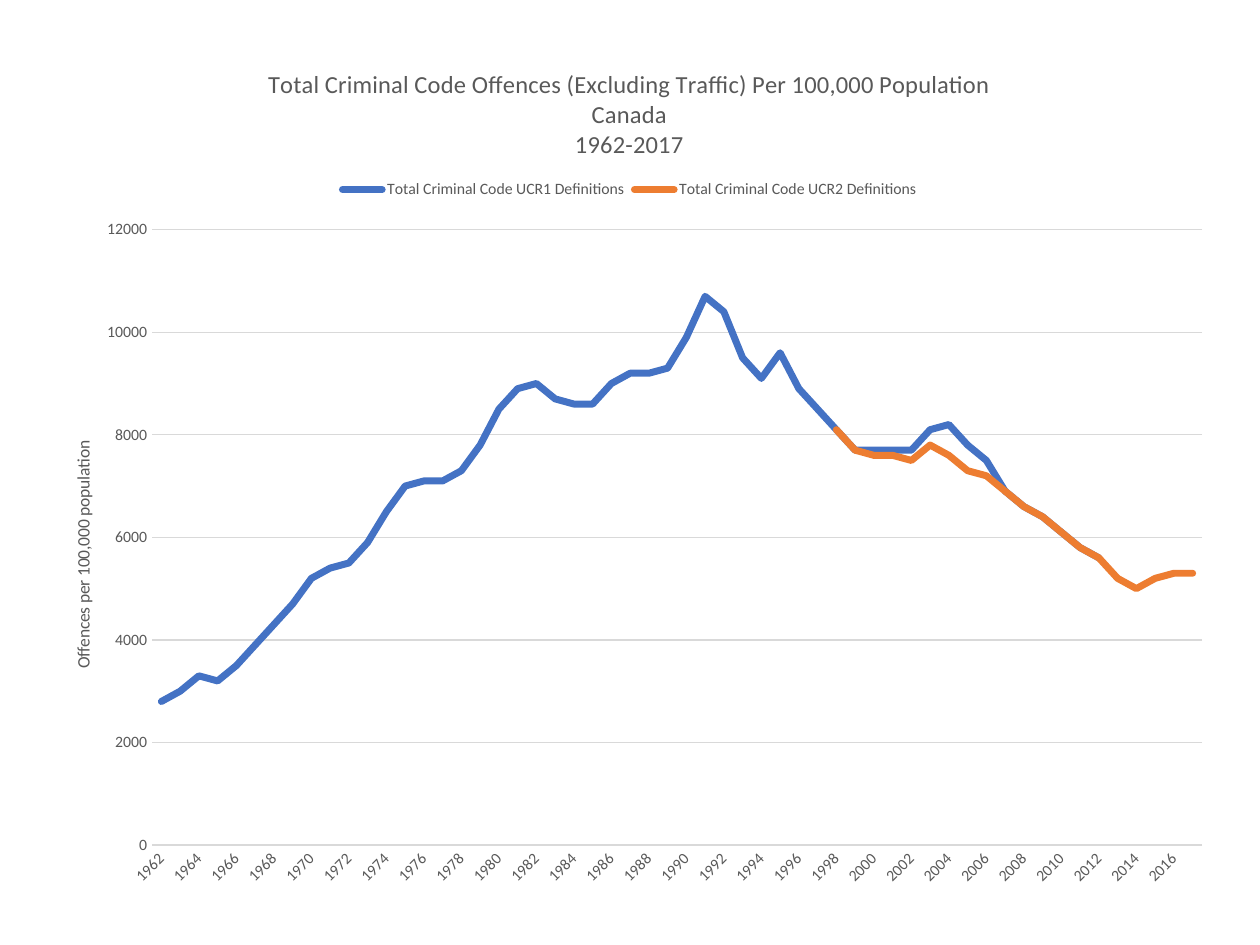
from lxml.etree import SubElement
from pptx import Presentation
from pptx.chart.data import CategoryChartData
from pptx.dml.color import RGBColor
from pptx.enum.chart import XL_CHART_TYPE as ChartType, XL_LEGEND_POSITION as LegendPos
from pptx.enum.chart import XL_TICK_MARK as TickMark
from pptx.oxml import parse_xml
from pptx.oxml.ns import nsdecls, qn
from pptx.util import Inches, Pt

FONT = "Calibri"
GREY = RGBColor(0x59, 0x59, 0x59)
GRID = RGBColor(0xD9, 0xD9, 0xD9)
BLUE = RGBColor(0x44, 0x72, 0xC4)
ORANGE = RGBColor(0xED, 0x7D, 0x31)

TITLE = ["Total Criminal Code Offences (Excluding Traffic) Per 100,000 Population",
         "Canada", "1962-2017"]
AXIS_TITLE = ["Offences per 100,000 population"]
YEARS = range(1962, 2018)
# name, first year, colour, offences per 100,000 population
SERIES = [
    ("Total Criminal Code UCR1 Definitions", 1962, BLUE, [
        2800, 3000, 3300, 3200, 3500, 3900, 4300, 4700, 5200, 5400,
        5500, 5900, 6500, 7000, 7100, 7100, 7300, 7800, 8500, 8900,
        9000, 8700, 8600, 8600, 9000, 9200, 9200, 9300, 9900, 10700,
        10400, 9500, 9100, 9600, 8900, 8500, 8100, 7700, 7700, 7700,
        7700, 8100, 8200, 7800, 7500, 6900, 6600, 6400, 6100, 5800, 5600]),
    ("Total Criminal Code UCR2 Definitions", 1998, ORANGE, [
        8100, 7700, 7600, 7600, 7500, 7800, 7600, 7300, 7200, 6900,
        6600, 6400, 6100, 5800, 5600, 5200, 5000, 5200, 5300, 5300]),
]


def style_font(font, size, color=GREY):
    font.name, font.size, font.bold = FONT, Pt(size), False
    font.color.rgb = color


def write(tf, lines, size):
    for i, line in enumerate(lines):
        p = tf.paragraphs[0] if i == 0 else tf.add_paragraph()
        r = p.add_run()
        r.text = line
        style_font(r.font, size)


def place(element, index, **shares):
    """Set a manual layout, given in shares of the chart's size."""
    for old in element.findall(qn("c:layout")):
        element.remove(old)
    layout = parse_xml(f"<c:layout {nsdecls('c')}><c:manualLayout/></c:layout>")
    manual = layout[0]
    if "w" in shares:
        SubElement(manual, qn("c:layoutTarget")).set("val", "inner")
    for key in ("x", "y"):
        SubElement(manual, qn(f"c:{key}Mode")).set("val", "edge")
    for key, share in shares.items():
        SubElement(manual, qn(f"c:{key}")).set("val", str(share))
    element.insert(index, layout)


def style_line(line, color, width):
    line.color.rgb = color
    line.width = Pt(width)


prs = Presentation()
prs.slide_width, prs.slide_height = Inches(10), Inches(7.5)
s = prs.slides.add_slide(prs.slide_layouts[6])

data = CategoryChartData(number_format="0")
data.categories = [str(year) for year in YEARS]
for name, first, _, values in SERIES:
    before = [None] * (first - YEARS[0])
    after = [None] * (len(YEARS) - len(before) - len(values))
    data.add_series(name, before + values + after)
chart = s.shapes.add_chart(ChartType.LINE, Inches(0.26), Inches(0.31),
                           Inches(9.47), Inches(6.88), data).chart
style_font(chart.font, 10)

chart.has_title = True
write(chart.chart_title.text_frame, TITLE, 14)
chart.has_legend = True
chart.legend.position = LegendPos.TOP
chart.legend.include_in_layout = False
style_font(chart.legend.font, 9)
place(chart.plots[0]._element.getparent(), 0, x=0.1, y=0.22, w=0.88, h=0.71)

for series, (_, _, color, _) in zip(chart.plots[0].series, SERIES):
    series.smooth = False
    style_line(series.format.line, color, 4)
    series.format.line._get_or_add_ln().set("cap", "rnd")

years, rates = chart.category_axis, chart.value_axis
for axis in (years, rates):
    axis.major_tick_mark = axis.minor_tick_mark = TickMark.NONE
    style_font(axis.tick_labels.font, 9)

style_line(years.format.line, GRID, 0.75)
years._element.txPr.bodyPr.set("rot", "-2700000")
skip = parse_xml(f'<c:tickLblSkip {nsdecls("c")} val="2"/>')
years._element.find(qn("c:noMultiLvlLbl")).addprevious(skip)

rates.minimum_scale, rates.maximum_scale, rates.major_unit = 0, 12000, 2000
rates.format.line.fill.background()
style_line(rates.major_gridlines.format.line, GRID, 0.75)
rates.has_title = True
tf = rates.axis_title.text_frame
write(tf, AXIS_TITLE, 10)
tf._txBody.bodyPr.set("rot", "-5400000")
tf._txBody.bodyPr.set("vert", "horz")
place(rates.axis_title._element, 1, x=0.03, y=0.46)

prs.save("out.pptx")
